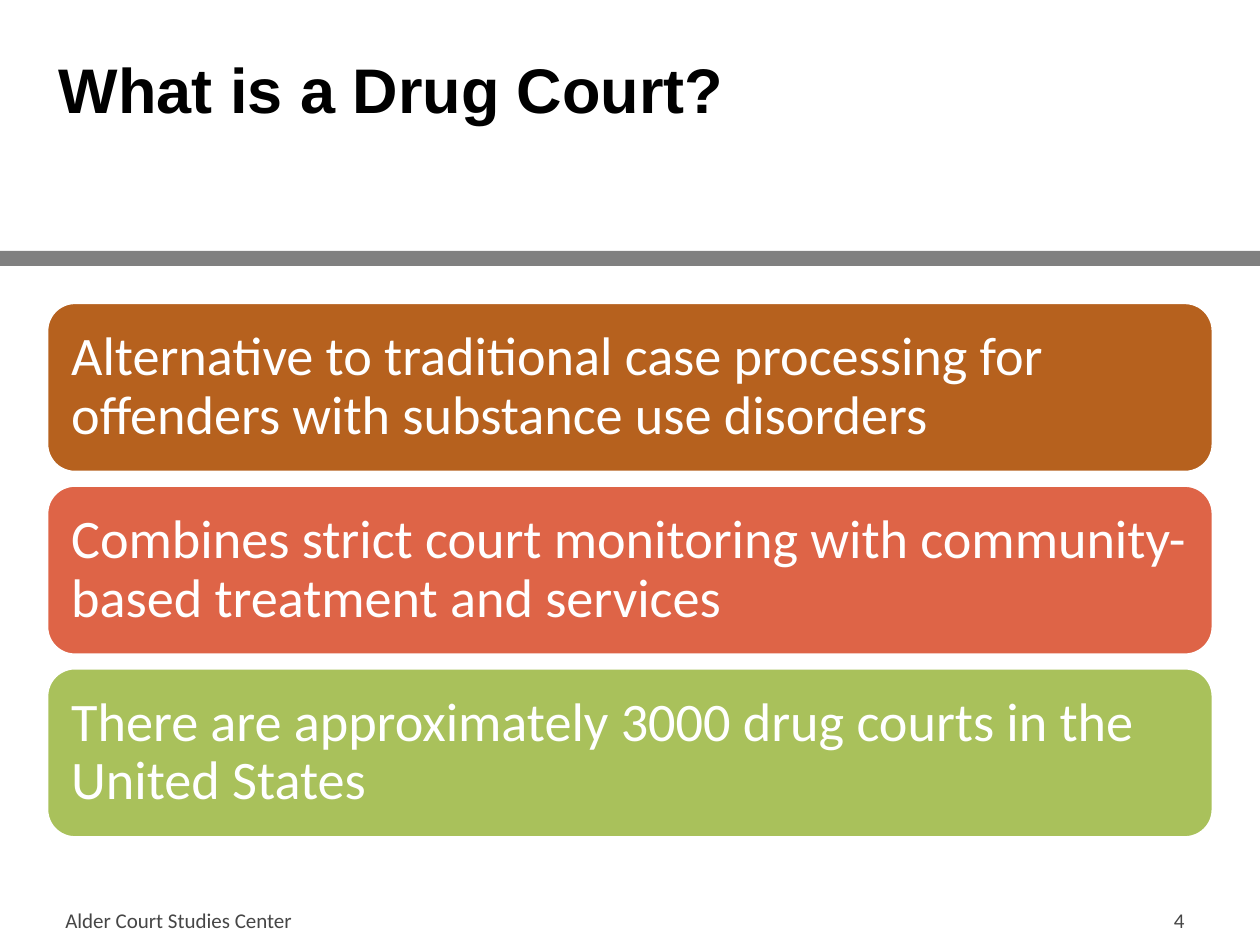
from pptx import Presentation
from pptx.dml.color import RGBColor
from pptx.enum.shapes import MSO_SHAPE
from pptx.enum.text import MSO_ANCHOR, PP_ALIGN
from pptx.util import Inches, Pt

WHITE = RGBColor(0xFF, 0xFF, 0xFF)
BLACK = RGBColor(0x00, 0x00, 0x00)
GRAY = RGBColor(0x80, 0x80, 0x80)
DARK_GRAY = RGBColor(0x46, 0x46, 0x46)
BROWN = RGBColor(0xB6, 0x61, 0x1E)
CORAL = RGBColor(0xDE, 0x64, 0x47)
GREEN = RGBColor(0xA9, 0xC1, 0x5B)

POINTS = [
    ("Alternative to traditional case processing for offenders with substance use disorders", BROWN),
    ("Combines strict court monitoring with community-based treatment and services", CORAL),
    ("There are approximately 3000 drug courts in the United States", GREEN),
]
CARD_TOP, CARD_HEIGHT, CARD_GAP = 2.4, 1.35, 0.1


class SlideBuilder:
    body_font = "Calibri"
    title_font = "Arial"
    left, width = 0.37, 9.26

    def __init__(self, slide):
        self.slide = slide

    def set_text(self, sp, text, size, color, font, anchor, align=PP_ALIGN.LEFT, bold=False):
        tf = sp.text_frame
        tf.word_wrap = True
        tf.vertical_anchor = anchor
        tf.text = text
        p = tf.paragraphs[0]
        p.alignment = align
        r = p.runs[0]
        r.font.size = Pt(size)
        r.font.name = font
        r.font.bold = bold
        r.font.color.rgb = color
        return tf

    def shape(self, kind, left, top, width, height, fill):
        sp = self.slide.shapes.add_shape(
            kind, Inches(left), Inches(top), Inches(width), Inches(height))
        sp.shadow.inherit = False
        sp.fill.solid()
        sp.fill.fore_color.rgb = fill
        return sp

    def divider(self, top, height):
        sp = self.shape(MSO_SHAPE.RECTANGLE, 0, top, 10, height, GRAY)
        sp.line.fill.background()

    def title(self, text):
        sp = self.slide.shapes.add_textbox(
            Inches(self.left), Inches(0.3), Inches(self.width), Inches(1.45))
        tf = self.set_text(sp, text, 36, BLACK, self.title_font, MSO_ANCHOR.TOP, bold=True)
        tf.margin_top = Inches(0.1)

    def card(self, top, text, fill):
        sp = self.shape(
            MSO_SHAPE.ROUNDED_RECTANGLE, self.left, top, self.width, CARD_HEIGHT, fill)
        sp.line.color.rgb = WHITE
        sp.line.width = Pt(2)
        tf = self.set_text(sp, text, 31, WHITE, self.body_font, MSO_ANCHOR.MIDDLE)
        tf.margin_left = tf.margin_right = Inches(0.13)
        tf.margin_top = tf.margin_bottom = Inches(0.13)
        tf.paragraphs[0].line_spacing = 0.9

    def footer(self, left, width, text, align):
        sp = self.slide.shapes.add_textbox(
            Inches(left), Inches(7.1), Inches(width), Inches(0.4))
        self.set_text(sp, text, 12, DARK_GRAY, self.body_font, MSO_ANCHOR.MIDDLE, align)


def main():
    prs = Presentation()
    prs.slide_width = Inches(10)
    prs.slide_height = Inches(7.5)
    s = SlideBuilder(prs.slides.add_slide(prs.slide_layouts[6]))
    s.divider(1.99, 0.12)
    s.title("What is a Drug Court?")
    for i, (text, fill) in enumerate(POINTS):
        s.card(CARD_TOP + i * (CARD_HEIGHT + CARD_GAP), text, fill)
    s.footer(7.17, 2.33, "4", PP_ALIGN.RIGHT)
    s.footer(0.42, 3.17, "Alder Court Studies Center", PP_ALIGN.LEFT)
    prs.save("out.pptx")


if __name__ == "__main__":
    main()
